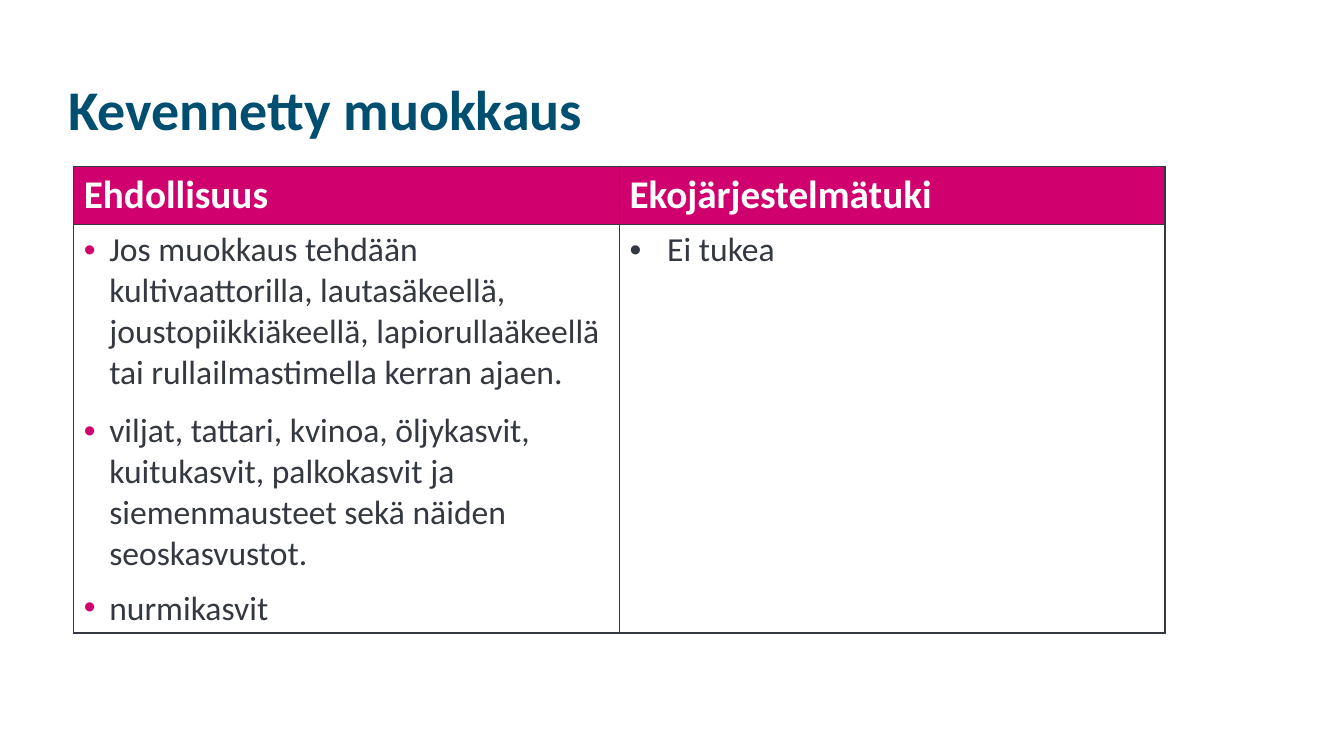
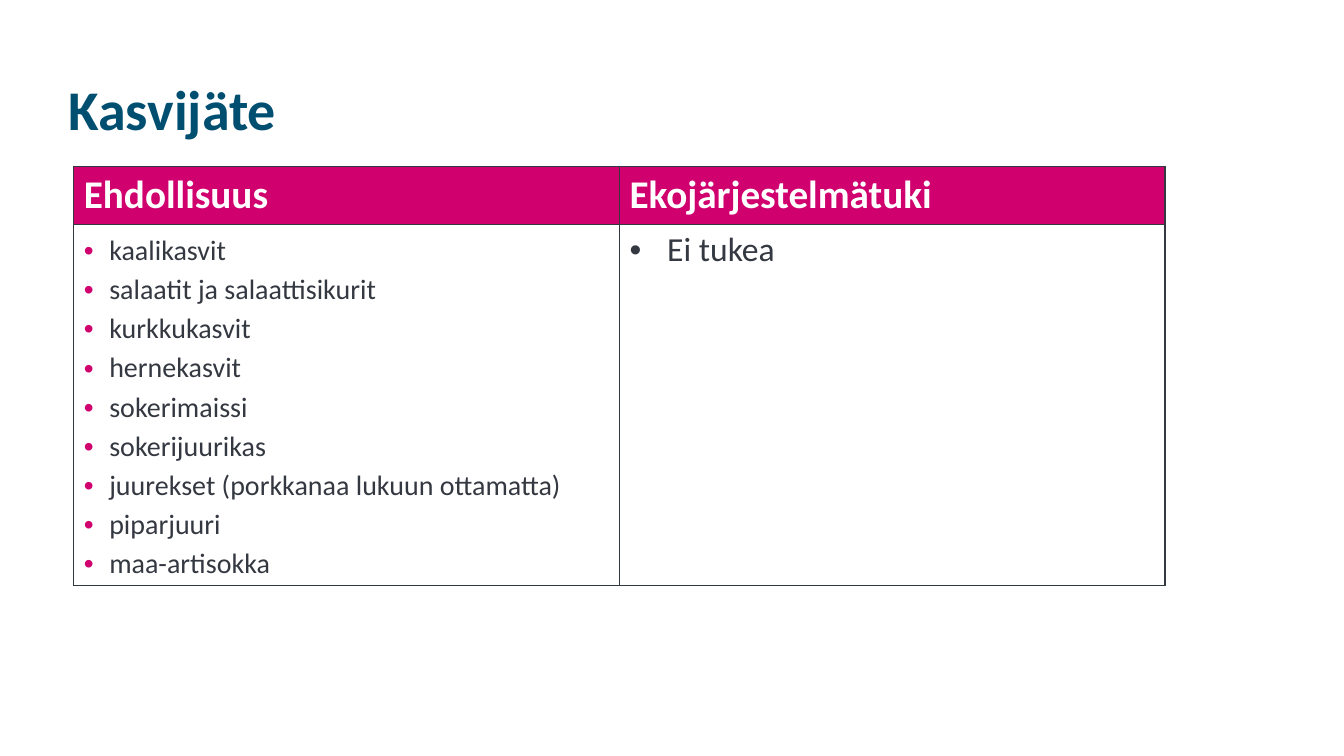
from lxml.etree import SubElement
from pptx import Presentation
from pptx.dml.color import RGBColor
from pptx.enum.text import MSO_ANCHOR, PP_ALIGN
from pptx.oxml.ns import qn
from pptx.util import Cm, Pt

# Shared style
FONT = "Calibri"
BLUE, PINK, DARK, WHITE = "004F71", "D0006F", "343841", "FFFFFF"
HEADINGS = ("Ehdollisuus", "Ekojärjestelmätuki")
NO_SUPPORT = "Ei tukea"
TITLE_ONLY = 5

# Slide content
TILLAGE = (
    "Jos muokkaus tehdään kultivaattorilla, lautasäkeellä, joustopiikkiäkeellä, "
    "lapiorullaäkeellä tai rullailmastimella kerran ajaen.",
    "viljat, tattari, kvinoa, öljykasvit, kuitukasvit, palkokasvit ja "
    "siemenmausteet sekä näiden seoskasvustot.",
    "nurmikasvit",
)
CROPS = (
    "kaalikasvit",
    "salaatit ja salaattisikurit",
    "kurkkukasvit",
    "hernekasvit",
    "sokerimaissi",
    "sokerijuurikas",
    "juurekset (porkkanaa lukuun ottamatta)",
    "piparjuuri",
    "maa-artisokka",
)


def color(value):
    return RGBColor.from_string(value)


def format_runs(paragraph, size, tint, bold=False):
    for span in paragraph.runs:
        span.font.name = FONT
        span.font.size = Pt(size)
        span.font.bold = bold
        span.font.color.rgb = color(tint)


def add_bullet(paragraph, indent, tint):
    properties = paragraph._p.get_or_add_pPr()
    properties.set("marL", str(indent))
    properties.set("indent", str(-indent))
    bullet_color = SubElement(properties, qn("a:buClr"))
    SubElement(bullet_color, qn("a:srgbClr"), val=tint)
    SubElement(properties, qn("a:buFont"), typeface="Arial")
    SubElement(properties, qn("a:buChar"), char="•")


def add_title(page, text):
    title = page.shapes.title
    title.left, title.top = Cm(1.47), Cm(1.02)
    title.width, title.height = Cm(27.1), Cm(3.68)
    frame = title.text_frame
    frame.text = text
    frame.vertical_anchor = MSO_ANCHOR.MIDDLE
    paragraph = frame.paragraphs[0]
    paragraph.alignment = PP_ALIGN.LEFT
    paragraph.line_spacing = Pt(40)
    format_runs(paragraph, 40, BLUE, bold=True)


def draw_borders(cell):
    properties = cell._tc.get_or_add_tcPr()
    for side in ("a:lnL", "a:lnR", "a:lnT", "a:lnB"):
        line = SubElement(properties, qn(side), w=str(Pt(1)))
        fill = SubElement(line, qn("a:solidFill"))
        SubElement(fill, qn("a:srgbClr"), val=DARK)


def fill_list(cell, items, size, indent=Cm(0.64), tint=PINK, gap=0, spacing=None):
    frame = cell.text_frame
    frame.text = "\n".join(items)
    for index, paragraph in enumerate(frame.paragraphs):
        add_bullet(paragraph, indent, tint)
        paragraph.line_spacing = spacing
        paragraph.space_before = Pt(gap if index else 0)
        paragraph.space_after = Pt(gap)
        format_runs(paragraph, size, DARK)


def add_comparison(page, body_height):
    """Add the two-column table and return its left body cell."""
    header_height = Cm(1.46)
    frame = page.shapes.add_table(
        2, 2, Cm(1.86), Cm(4.19), Cm(27.5), header_height + body_height)
    table = frame.table
    table.horz_banding = False
    table.rows[0].height, table.rows[1].height = header_height, body_height
    for cell in table.iter_cells():
        draw_borders(cell)
        cell.fill.background()
    for column, heading in enumerate(HEADINGS):
        cell = table.cell(0, column)
        cell.fill.solid()
        cell.fill.fore_color.rgb = color(PINK)
        cell.text_frame.text = heading
        format_runs(cell.text_frame.paragraphs[0], 28, WHITE, bold=True)
    fill_list(table.cell(1, 1), [NO_SUPPORT], 24, indent=Cm(0.95), tint=DARK)
    return table.cell(1, 0)


def add_page(deck, title, body_height):
    page = deck.slides.add_slide(deck.slide_layouts[TITLE_ONLY])
    add_title(page, title)
    return add_comparison(page, body_height)


def main():
    deck = Presentation()
    deck.slide_width, deck.slide_height = Cm(33.87), Cm(19.05)

    # Reduced tillage
    conditions = add_page(deck, "Kevennetty muokkaus", Cm(10.3))
    fill_list(conditions, TILLAGE, 24, gap=6)
    conditions.text_frame.paragraphs[-1].line_spacing = 0.9

    # Crop residue
    conditions = add_page(deck, "Kasvijäte", Cm(9.1))
    fill_list(conditions, CROPS, 20, spacing=1.14)

    deck.save("out.pptx")


if __name__ == "__main__":
    main()
